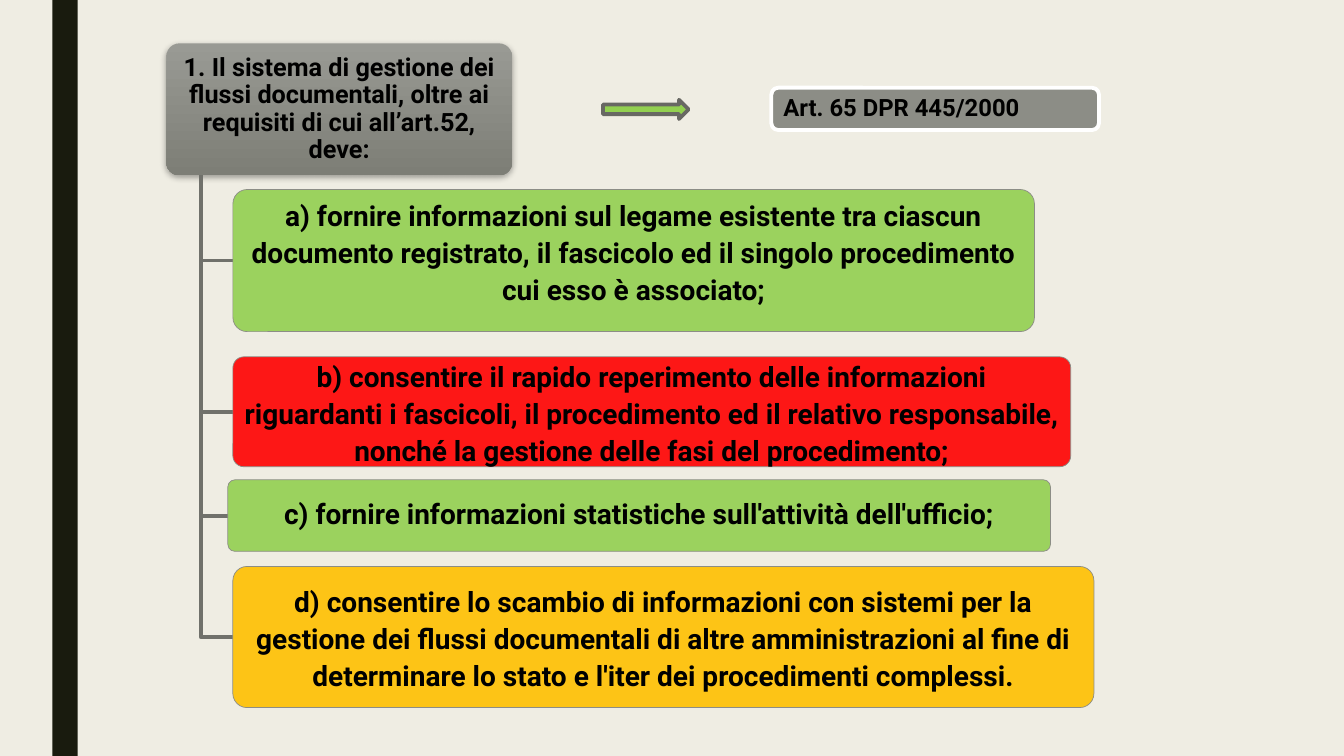
import pptx
import pptx.dml.color
import pptx.enum.shapes
import pptx.enum.text
import pptx.oxml
import pptx.oxml.ns
import pptx.util

Inches = pptx.util.Inches
Pt = pptx.util.Pt
RGB = pptx.dml.color.RGBColor.from_string
SHAPE = pptx.enum.shapes.MSO_SHAPE
ALIGN = pptx.enum.text.PP_ALIGN

THEME = {
    "font": "Roboto", "text": "000000", "background": "EFEDE3", "band": "191B0E",
    "gray": "8C8D86", "gray_light": "999A94", "gray_dark": "7D7E76",
    "branch": "70716B", "arrow_line": "686863", "white": "FFFFFF",
    "green": "92D050", "red": "FF0000", "amber": "FFC000",
    "heading_size": 18, "item_size": 20, "article_size": 17,
    "hairline": 0.5, "thick": 2.75,
}


def add_block(kind, box, fill, line=None, width=0, corner=None):
    block = slide.shapes.add_shape(kind, *[Inches(v) for v in box])
    block.shadow.inherit = False
    block.fill.solid()
    block.fill.fore_color.rgb = RGB(THEME[fill])
    if line:
        block.line.color.rgb = RGB(THEME[line])
        block.line.width = Pt(width)
    else:
        block.line.fill.background()
    if corner:
        block.adjustments[0] = corner
    return block


def write(text, block, size, spacing=0.9, align=ALIGN.CENTER, inset=0.08, lift=0):
    frame = block.text_frame
    frame.word_wrap = True
    frame.vertical_anchor = pptx.enum.text.MSO_ANCHOR.MIDDLE
    frame.margin_left = frame.margin_right = Inches(inset)
    frame.margin_top, frame.margin_bottom = Inches(0.05), Inches(0.05 + lift)
    paragraph = frame.paragraphs[0]
    paragraph.alignment = align
    paragraph.line_spacing = spacing
    run = paragraph.add_run()
    run.text = text
    run.font.name = THEME["font"]
    run.font.size = Pt(size)
    run.font.bold = True
    run.font.color.rgb = RGB(THEME["text"])


prs = pptx.Presentation()
prs.slide_width, prs.slide_height = Inches(13.33), Inches(7.5)
slide = prs.slides.add_slide(prs.slide_layouts[6])
slide.background.fill.solid()
slide.background.fill.fore_color.rgb = RGB(THEME["background"])

# Side band
add_block(SHAPE.RECTANGLE, (0.52, 0, 0.25, 7.5), "band")

# Heading with gradient and soft shadow
heading = add_block(SHAPE.ROUNDED_RECTANGLE, (1.65, 0.43, 3.43, 1.31), "gray", corner=0.1)
heading.fill.gradient()
heading.fill.gradient_angle = 270
for stop, shade in zip(heading.fill.gradient_stops, ("gray_light", "gray_dark")):
    stop.color.rgb = RGB(THEME[shade])
effects = heading._element.spPr.find(pptx.oxml.ns.qn("a:effectLst"))
effects.append(pptx.oxml.parse_xml(
    f'<a:outerShdw {pptx.oxml.ns.nsdecls("a")} blurRad="57150" dist="19050" dir="5400000" '
    'algn="ctr" rotWithShape="0"><a:srgbClr val="000000"><a:alpha val="35000"/>'
    '</a:srgbClr></a:outerShdw>'))
write("1. Il sistema di gestione dei flussi documentali, oltre ai requisiti di cui all’art.52, deve:",
      heading, THEME["heading_size"])

# Requirements: text, box, colour, line spacing, upward shift of the text
requirements = [
    ("a) fornire informazioni sul legame esistente tra ciascun documento registrato, "
     "il fascicolo ed il singolo procedimento cui esso è associato;",
     (2.31, 1.88, 7.95, 1.41), "green", 1.1, 0.2),
    ("b) consentire il rapido reperimento delle informazioni riguardanti i fascicoli, "
     "il procedimento ed il relativo responsabile, nonché la gestione delle fasi del procedimento;",
     (2.31, 3.54, 8.31, 1.09), "red", 1.1, 0),
    ("c) fornire informazioni statistiche sull'attività dell'ufficio;",
     (2.26, 4.76, 8.16, 0.71), "green", 0.9, 0),
    ("d) consentire lo scambio di informazioni con sistemi per la gestione dei flussi "
     "documentali di altre amministrazioni al fine di determinare lo stato e l'iter dei "
     "procedimenti complessi.",
     (2.31, 5.62, 8.54, 1.4), "amber", 1.1, 0),
]
trunk_x, trunk_top = Inches(1.99), Inches(1.74)
for text, box, colour, spacing, lift in requirements:
    # Branch from the heading to the middle of the box's left side
    left, top, _, height = box
    middle = Inches(top + height / 2)
    path_builder = slide.shapes.build_freeform(trunk_x, trunk_top)
    path_builder.add_line_segments([(trunk_x, middle), (Inches(left), middle)], close=False)
    branch = path_builder.convert_to_shape()
    branch.shadow.inherit = False
    branch.fill.background()
    branch.line.color.rgb = RGB(THEME["branch"])
    branch.line.width = Pt(THEME["thick"])

    requirement = add_block(SHAPE.ROUNDED_RECTANGLE, box, colour, "gray", THEME["hairline"], 0.1)
    colour_xml = requirement._element.spPr.find(pptx.oxml.ns.qn("a:solidFill"))[0]
    colour_xml.append(pptx.oxml.parse_xml(
        f'<a:alpha {pptx.oxml.ns.nsdecls("a")} val="90000"/>'))
    write(text, requirement, THEME["item_size"], spacing=spacing, lift=lift)

# Legal reference and the arrow to it
article = add_block(SHAPE.ROUNDED_RECTANGLE, (7.65, 0.87, 3.25, 0.42), "gray",
                    "white", THEME["thick"])
write("Art. 65 DPR 445/2000", article, THEME["article_size"], align=ALIGN.LEFT, inset=0.1)
add_block(SHAPE.RIGHT_ARROW, (5.98, 0.99, 0.85, 0.19), "green", "arrow_line", THEME["thick"])

prs.save("out.pptx")
